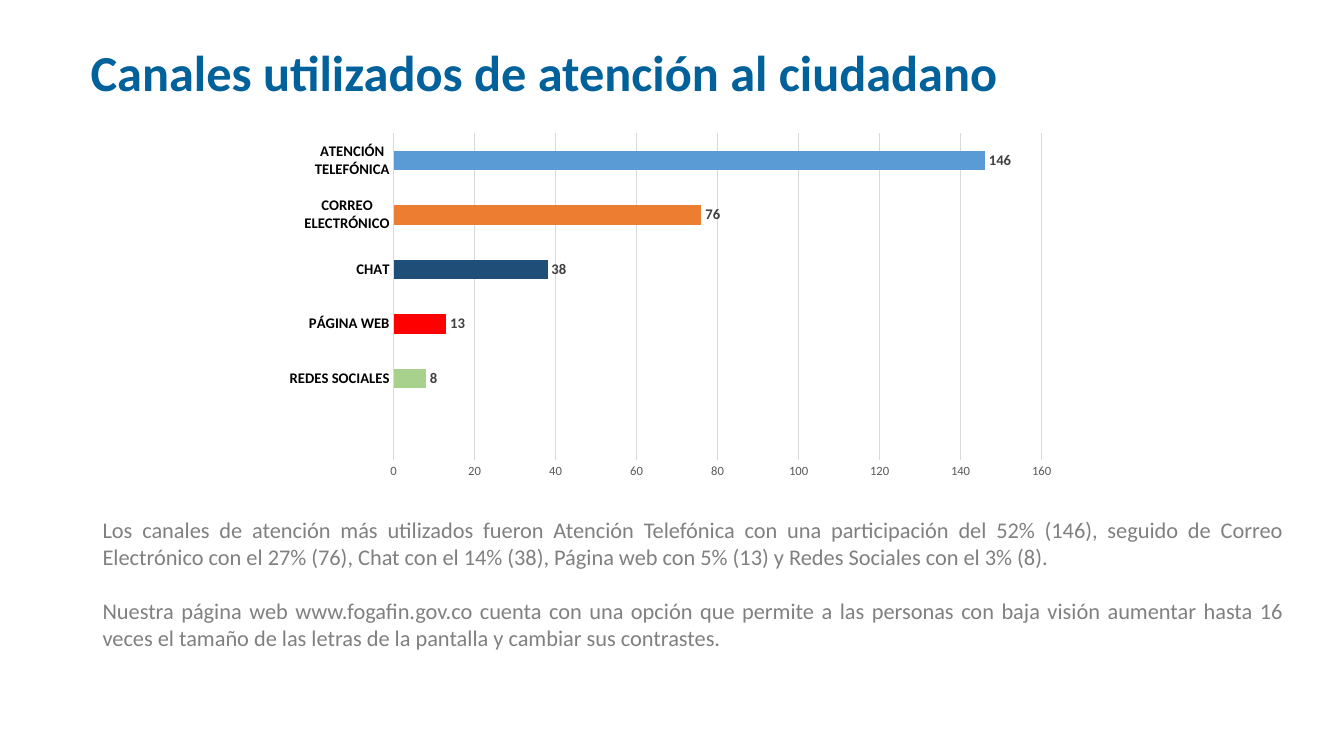
from lxml import etree
from pptx import Presentation
from pptx.chart.data import CategoryChartData
from pptx.dml.color import RGBColor
from pptx.enum.chart import XL_CHART_TYPE, XL_LABEL_POSITION, XL_TICK_MARK
from pptx.enum.text import MSO_ANCHOR, PP_ALIGN
from pptx.oxml.ns import qn
from pptx.util import Pt

BAR = XL_CHART_TYPE.BAR_CLUSTERED
OUTSIDE_END = XL_LABEL_POSITION.OUTSIDE_END
NO_TICK = XL_TICK_MARK.NONE
TOP, MIDDLE = MSO_ANCHOR.TOP, MSO_ANCHOR.MIDDLE
LEFT, JUSTIFY = PP_ALIGN.LEFT, PP_ALIGN.JUSTIFY

CHANNELS = [
    ("", None, "FFFF00"),
    ("REDES SOCIALES", 8, "A9D18E"),
    ("PÁGINA WEB", 13, "FF0000"),
    ("CHAT", 38, "1F4E79"),
    ("CORREO ELECTRÓNICO", 76, "ED7D31"),
    ("ATENCIÓN TELEFÓNICA", 146, "5B9BD5"),
]
BODY = [
    "Los canales de atención más utilizados fueron Atención Telefónica con una "
    "participación del 52% (146), seguido de Correo Electrónico con el 27% (76), "
    "Chat con el 14% (38), Página web con 5% (13) y Redes Sociales con el 3% (8). ",
    "Nuestra página web www.fogafin.gov.co cuenta con una opción que permite a las "
    "personas con baja visión aumentar hasta 16 veces el tamaño de las letras de la "
    "pantalla y cambiar sus contrastes.",
]


def rgb(value):
    return RGBColor.from_string(value)


class SlideBuilder:
    """Holds the font and the current slide, and adds elements to it."""

    def __init__(self, slide, font="Calibri"):
        self.slide = slide
        self.font = font

    def style(self, font, size, color, bold=False):
        for name, value in {"name": self.font, "size": Pt(size), "bold": bold}.items():
            setattr(font, name, value)
        font.color.rgb = rgb(color)

    def text(self, box, paragraphs, size, color, bold=False, anchor=TOP, **fmt):
        sp = self.slide.shapes.add_textbox(*map(Pt, box))
        tf = sp.text_frame
        tf.word_wrap = True
        tf.vertical_anchor = anchor
        gap = fmt.pop("gap", 0)
        for i, content in enumerate(paragraphs):
            p = tf.paragraphs[0] if i == 0 else tf.add_paragraph()
            for name, value in fmt.items():
                setattr(p, name, value)
            if i:
                p.space_before = Pt(gap)
            r = p.add_run()
            r.text = content
            self.style(r.font, size, color, bold)

    def line(self, line, color):
        line.color.rgb = rgb(color)
        line.width = Pt(0.75)

    def bar_chart(self, box, rows, plot_area):
        data = CategoryChartData()
        data.categories = [name for name, _, _ in rows]
        data.add_series("Series 1", [value for _, value, _ in rows])
        chart = self.slide.shapes.add_chart(BAR, *map(Pt, box), data).chart
        chart.has_legend = chart.has_title = False
        self.style(chart.font, 10, "000000")
        self.axes(chart)
        self.bars(chart.plots[0], rows)
        self.place_plot(chart, plot_area)

    def axes(self, chart):
        cat, val = chart.category_axis, chart.value_axis
        for axis in (cat, val):
            axis.major_tick_mark = axis.minor_tick_mark = NO_TICK
        self.style(cat.tick_labels.font, 10.5, "000000", True)
        self.line(cat.format.line, "D9D9D9")
        self.style(val.tick_labels.font, 9, "595959")
        val.format.line.fill.background()
        self.line(val.major_gridlines.format.line, "D9D9D9")
        scale = {"minimum_scale": 0, "maximum_scale": 160, "major_unit": 20}
        for name, value in scale.items():
            setattr(val, name, value)

    def bars(self, plot, rows):
        plot.gap_width = 182
        plot.vary_by_categories = False
        series = plot.series[0]
        series.format.fill.solid()
        series.format.fill.fore_color.rgb = rgb(rows[-1][2])
        for i, (_, _, color) in enumerate(rows[:-1]):
            fill = series.points[i].format.fill
            fill.solid()
            fill.fore_color.rgb = rgb(color)
        labels = series.data_labels
        labels.show_value = True
        labels.position = OUTSIDE_END
        self.style(labels.font, 10.5, "404040", True)

    def place_plot(self, chart, plot_area):
        area = chart.plots[0]._element.getparent()
        for old in area.findall(qn("c:layout")):
            area.remove(old)
        layout = etree.Element(qn("c:layout"))
        manual = etree.SubElement(layout, qn("c:manualLayout"))
        values = {"layoutTarget": "inner", "xMode": "edge", "yMode": "edge"}
        values.update(zip("xywh", plot_area))
        for tag, value in values.items():
            etree.SubElement(manual, qn("c:" + tag)).set("val", str(value))
        area.insert(0, layout)


def main():
    prs = Presentation()
    prs.slide_width, prs.slide_height = Pt(960), Pt(540)
    s = SlideBuilder(prs.slides.add_slide(prs.slide_layouts[6]))
    s.text((57.6, 14.4, 762.5, 78.5), ["Canales utilizados de atención al ciudadano"],
           36, "01619B", True, MIDDLE, alignment=LEFT, line_spacing=0.9)
    s.bar_chart((196.5, 90, 564.5, 257), CHANNELS, (0.15, 0.02, 0.82, 0.91))
    s.text((66.2, 365, 858.2, 104.4), BODY, 16, "808080", alignment=JUSTIFY, gap=19.5)
    prs.save("out.pptx")


if __name__ == "__main__":
    main()
